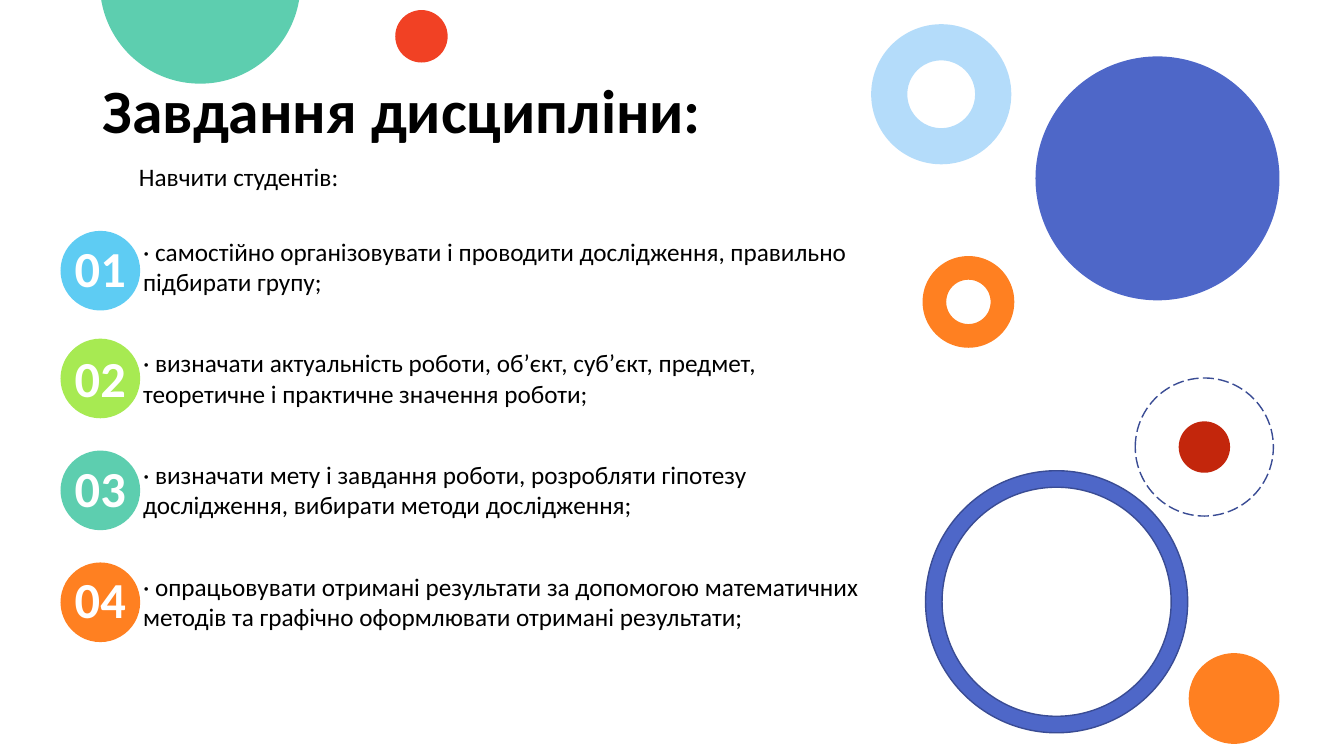
from pptx import Presentation
from pptx import util as u
from pptx.dml.color import RGBColor
from pptx.enum import dml, shapes, text

FONT = "Calibri"
COLORS = {
    "black": "000000", "white": "FFFFFF", "sky": "5ECCF3", "lime": "A7EA52",
    "mint": "5DCEAF", "orange": "FF8021", "red": "F14124", "dark_red": "C3260C",
    "blue": "4E67C8", "navy": "3A4C94", "pale_blue": "B4DCFA",
}
# Each task: circle top, circle colour, wording
TASKS = [
    (2.29, "sky", "· самостійно організовувати і проводити дослідження, "
                  "правильно підбирати групу;"),
    (3.36, "lime", "· визначати актуальність роботи, об’єкт, суб’єкт, предмет, "
                   "теоретичне і практичне значення роботи;"),
    (4.47, "mint", "· визначати мету і завдання роботи, розробляти гіпотезу "
                   "дослідження, вибирати методи дослідження;"),
    (5.58, "orange", "· опрацьовувати отримані результати за допомогою математичних "
                     "методів та графічно оформлювати отримані результати;"),
]
TASK_STEP = 1.11
NUMBER_STEP = 1.095


def color(name):
    return RGBColor.from_string(COLORS[name])


def format_text(para, size, ink, bold=False):
    for span in para.runs:
        span.font.name = FONT
        span.font.size = u.Pt(size)
        span.font.bold = bold
        span.font.color.rgb = color(ink)


def add_text(page, left, top, width, height, wording, size=18, ink="black",
             bold=False, align=text.PP_ALIGN.LEFT):
    box = page.shapes.add_textbox(*map(u.Inches, (left, top, width, height)))
    box.text_frame.word_wrap = True
    para = box.text_frame.paragraphs[0]
    para.text = wording
    para.alignment = align
    format_text(para, size, ink, bold)


def add_round(page, left, top, size, fill=None, line=None, ring=None):
    """A disc, or a ring when its relative thickness is given."""
    kind = shapes.MSO_SHAPE.OVAL if ring is None else shapes.MSO_SHAPE.DONUT
    shape = page.shapes.add_shape(kind, *map(u.Inches, (left, top, size, size)))
    shape.shadow.inherit = False
    if ring is not None:
        shape.adjustments[0] = ring
    if fill:
        shape.fill.solid()
        shape.fill.fore_color.rgb = color(fill)
    else:
        shape.fill.background()
    if line:
        shape.line.color.rgb = color(line)
        shape.line.width = u.Pt(1)
    else:
        shape.line.fill.background()
    return shape


def add_heading(page, left, top, width, height):
    title = page.shapes.title
    title.left, title.top, title.width, title.height = map(
        u.Inches, (left, top, width, height))
    title.text_frame.text = "Завдання дисципліни:"
    title.text_frame.vertical_anchor = text.MSO_ANCHOR.MIDDLE
    para = title.text_frame.paragraphs[0]
    para.alignment = text.PP_ALIGN.LEFT
    para.line_spacing = 0.9
    format_text(para, 44, "black", bold=True)
    add_text(page, left + 0.36, top + 1.15, 7.32, 0.4, "Навчити студентів:")


def add_tasks(page, left, top):
    for index, (circle_top, fill, wording) in enumerate(TASKS):
        add_text(page, left + 0.72, top + index * TASK_STEP, 7.32, 0.71, wording)
        add_round(page, left, circle_top, 0.79, fill)
        add_text(page, left - 0.07, top + 0.01 + index * NUMBER_STEP, 0.93, 0.71,
                 f"{index + 1:02}", 36, "white", True, text.PP_ALIGN.CENTER)


def add_top_circles(page, left, top):
    add_round(page, left, top - 1.16, 1.99, "mint")
    add_round(page, left + 2.93, top + 0.1, 0.52, "red")


def add_side_circles(page, left, top):
    # Rings
    add_round(page, left, top, 1.39, "pale_blue", ring=0.258)
    add_round(page, left + 0.51, top + 2.3, 0.91, "orange", ring=0.258)
    add_round(page, left + 0.54, top + 4.43, 2.6, "blue", "navy", ring=0.063)
    # Dashed orbit with its centre
    orbit = add_round(page, left + 2.62, top + 3.51, 1.37, line="navy")
    orbit.line.dash_style = dml.MSO_LINE.LONG_DASH
    add_round(page, left + 3.05, top + 3.94, 0.51, "dark_red")
    # Plain discs
    add_round(page, left + 3.15, top + 6.24, 0.9, "orange")
    add_round(page, left + 1.63, top + 0.32, 2.42, "blue")


def main():
    deck = Presentation()
    deck.slide_width, deck.slide_height = u.Inches(13.33), u.Inches(7.5)
    page = deck.slides.add_slide(deck.slide_layouts.get_by_name("Title Only"))
    add_heading(page, 0.92, 0.4, 11.5, 1.45)
    add_tasks(page, 0.6, 2.29)
    add_top_circles(page, 0.99, 0)
    add_side_circles(page, 8.64, 0.24)
    deck.save("out.pptx")


if __name__ == "__main__":
    main()
